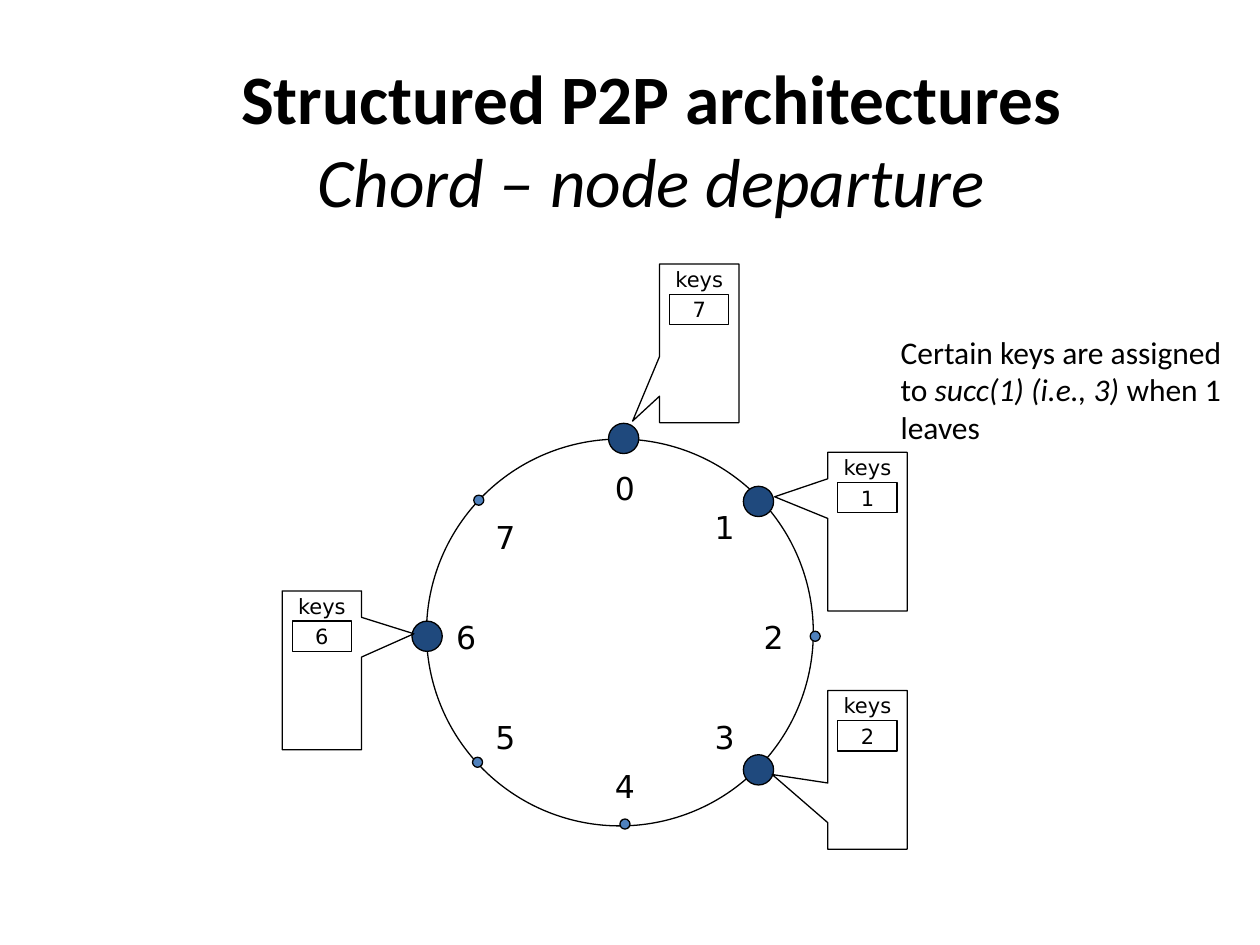
from pptx import Presentation
from pptx.dml.color import RGBColor
from pptx.enum.shapes import MSO_SHAPE
from pptx.enum.text import MSO_ANCHOR, MSO_AUTO_SIZE, PP_ALIGN
from pptx.util import Inches, Pt

BLACK = RGBColor(0x00, 0x00, 0x00)
NAVY = RGBColor(0x1F, 0x49, 0x7D)
BLUE = RGBColor(0x4F, 0x81, 0xBD)

COLUMNS, ROWS = 100, 75
NODE_SIZE, DOT_SIZE = 2.4, 0.8
CARD_WIDTH, CARD_HEIGHT = 6.3, 12.6
KEY_WIDTH, KEY_HEIGHT = 4.7, 2.4

LABEL_FRAME = {"word_wrap": False, "vertical_anchor": MSO_ANCHOR.MIDDLE,
               "margin_left": 0, "margin_right": 0, "margin_top": 0, "margin_bottom": 0}
TITLE_FRAME = {"word_wrap": True, "vertical_anchor": MSO_ANCHOR.MIDDLE}
NOTE_FRAME = {"word_wrap": True, "auto_size": MSO_AUTO_SIZE.SHAPE_TO_FIT_TEXT}
NUMBER_FONT = {"name": "DejaVu Sans", "size": Pt(18)}
KEY_FONT = {"name": "DejaVu Sans", "size": Pt(12)}
TITLE_FONT = {"name": "Calibri", "size": Pt(39.6)}
NOTE_FONT = {"name": "Calibri", "size": Pt(18)}

NUMBERS = [("0", 49.6, 38.75), ("1", 57.5, 41.85), ("2", 61.4, 50.55), ("3", 57.5, 58.45),
           ("4", 49.6, 62.35), ("5", 40.1, 58.45), ("6", 37, 50.55), ("7", 40.1, 42.65)]
DOTS = [(38, 39.7), (37.9, 60.5), (64.7, 50.5), (49.6, 65.4)]
NODES = [(49.5, 34.8), (60.2, 39.8), (60.2, 61.1), (33.9, 50.5)]
CARDS = [("1", 65.7, 35.9, (-1.17, -0.22)), ("2", 65.7, 54.8, (-1.2, 0.03)),
         ("7", 52.35, 20.95, (-0.84, 0.49)), ("6", 22.4, 46.9, (1.16, -0.23))]


def set_values(target, values):
    """Set each named attribute of the target."""
    for name, value in values.items():
        setattr(target, name, value)


class Diagram:
    """Holds the slide, its grid and the common style."""

    def __init__(self, presentation):
        self.slide = presentation.slides.add_slide(presentation.slide_layouts[6])
        self.column = presentation.slide_width / COLUMNS
        self.row = presentation.slide_height / ROWS

    def place(self, left, top, width, height):
        """Turn grid units into slide lengths."""
        return (round(left * self.column), round(top * self.row),
                round(width * self.column), round(height * self.row))

    def outline(self, kind, box, fill=None):
        """Add a preset shape with a thin black line."""
        shape = self.slide.shapes.add_shape(kind, *self.place(*box))
        shape.shadow.inherit = False
        shape.line.width = Pt(0.75)
        shape.line.color.rgb = BLACK
        if fill is None:
            shape.fill.background()
        else:
            shape.fill.solid()
            shape.fill.fore_color.rgb = fill
        return shape

    def circle(self, x, y, size, fill=None):
        """Add a circle around a centre."""
        self.outline(MSO_SHAPE.OVAL, (x - size / 2, y - size / 2, size, size), fill)

    def fill_text(self, shape, lines, font, frame, alignment=PP_ALIGN.CENTER):
        """Fill a shape with lines of (text, format) runs."""
        set_values(shape.text_frame, frame)
        paragraph = shape.text_frame.paragraphs[0]
        paragraph.alignment = alignment
        for index, runs in enumerate(lines):
            if index:
                paragraph.add_line_break()
            for text, extra in runs:
                run = paragraph.add_run()
                run.text = text
                set_values(run.font, {**font, **extra})
                run.font.color.rgb = BLACK

    def text(self, box, lines, font, frame, alignment=PP_ALIGN.CENTER):
        """Add a text box."""
        shape = self.slide.shapes.add_textbox(*self.place(*box))
        self.fill_text(shape, lines, font, frame, alignment)

    def number(self, label, x, y):
        """Add a ring position number around a centre."""
        self.text((x - 1.6, y - 1.55, 3.2, 3.1), [[(label, {})]], NUMBER_FONT, LABEL_FRAME)

    def card(self, key, left, top, tip):
        """Add a callout with its heading and key cell."""
        callout = self.outline(MSO_SHAPE.RECTANGULAR_CALLOUT,
                               (left, top, CARD_WIDTH, CARD_HEIGHT))
        for index, value in enumerate(tip):
            callout.adjustments[index] = value
        inset = left + (CARD_WIDTH - KEY_WIDTH) / 2
        self.text((inset, top, KEY_WIDTH, KEY_HEIGHT), [[("keys", {})]], KEY_FONT, LABEL_FRAME)
        cell = self.outline(MSO_SHAPE.RECTANGLE,
                            (inset, top + KEY_HEIGHT, KEY_WIDTH, KEY_HEIGHT))
        self.fill_text(cell, [[(key, {})]], KEY_FONT, LABEL_FRAME)


def main():
    """Build and save the slide."""
    presentation = Presentation()
    set_values(presentation, {"slide_width": Inches(10), "slide_height": Inches(7.5)})
    diagram = Diagram(presentation)
    diagram.circle(49.2, 50.2, 30.7)
    for number in NUMBERS:
        diagram.number(*number)
    for x, y in DOTS:
        diagram.circle(x, y, DOT_SIZE, BLUE)
    for x, y in NODES:
        diagram.circle(x, y, NODE_SIZE, NAVY)
    for card in CARDS:
        diagram.card(*card)
    diagram.text((6.7, 4.7, 90, 12.5),
                 [[("Structured P2P architectures", {"bold": True})],
                  [("Chord – node departure", {"italic": True})]],
                 TITLE_FONT, TITLE_FRAME)
    diagram.text((70.5, 25.9, 28.4, 10.1),
                 [[("Certain keys are assigned to ", {}),
                   ("succ(1) (i.e., 3) ", {"italic": True}),
                   ("when 1 leaves", {})]],
                 NOTE_FONT, NOTE_FRAME, PP_ALIGN.LEFT)
    presentation.save("out.pptx")


if __name__ == "__main__":
    main()
